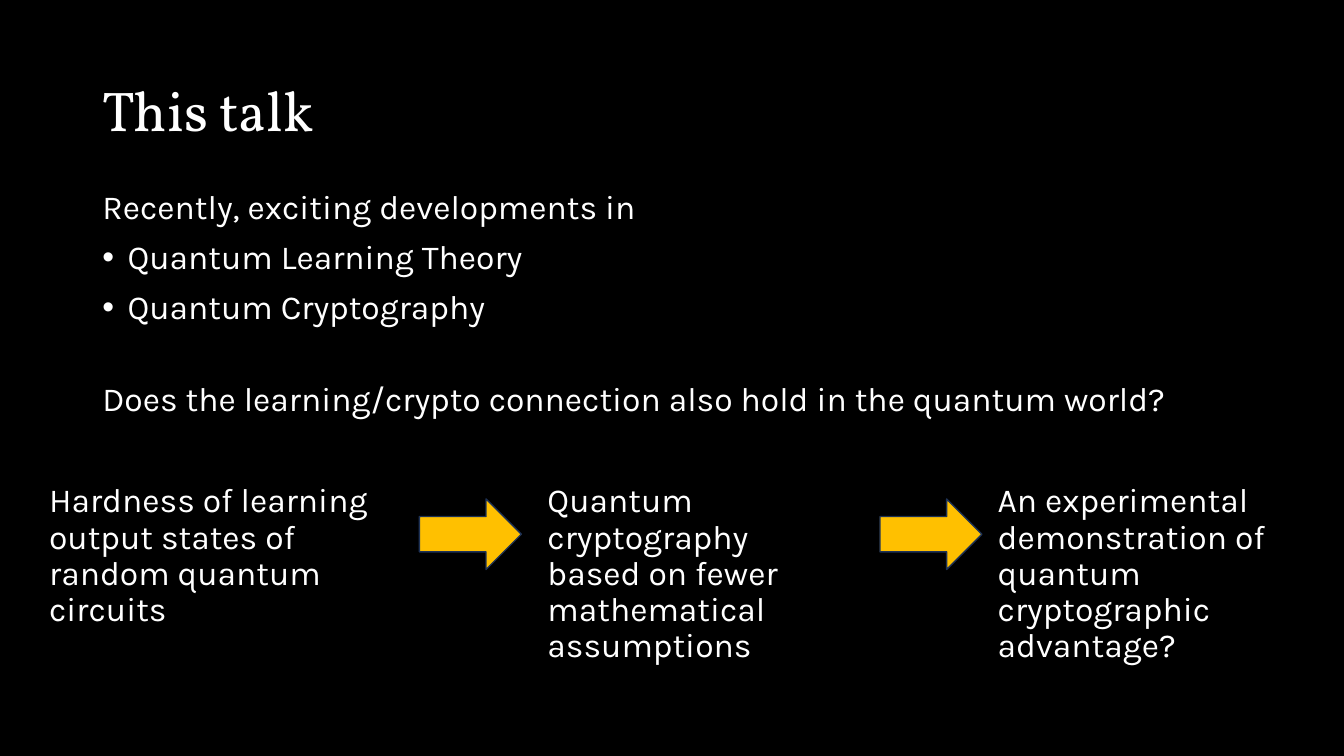
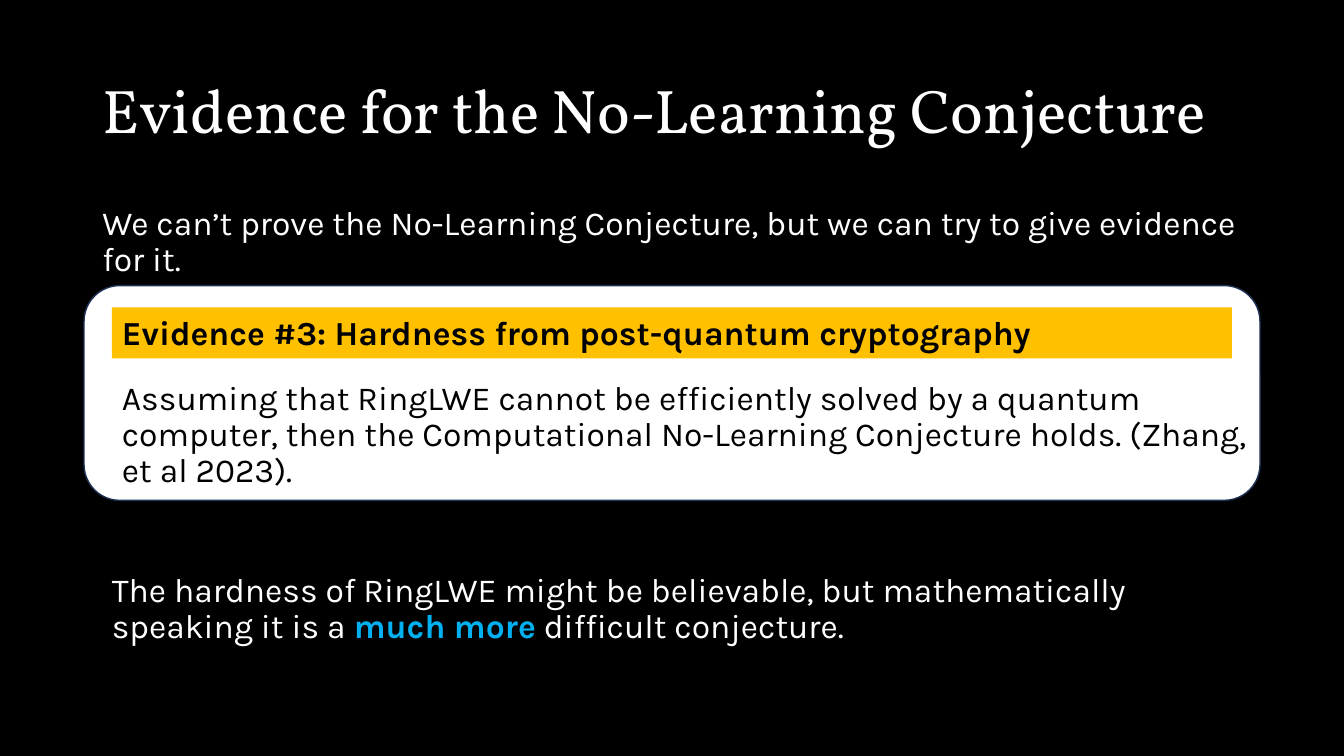
"""Build two talk slides on quantum learning and cryptography."""
from dataclasses import dataclass

import lxml.etree
import pptx
import pptx.dml.color
import pptx.enum.shapes
import pptx.enum.text
import pptx.oxml.ns
import pptx.util

WIDTH, HEIGHT = pptx.util.Inches(13.333), pptx.util.Inches(7.5)
COLS, ROWS = 48, 27
BLACK, WHITE, GOLD, NAVY, SKY = "000000", "FFFFFF", "FFC000", "1E3256", "00B0F0"
TITLE_FONT, BODY_FONT = "Vollkorn", "Karla"
SHAPES = pptx.enum.shapes.MSO_SHAPE
ANCHORS = pptx.enum.text.MSO_ANCHOR


@dataclass(frozen=True)
class Box:
    """An area in grid columns and rows."""
    col: float
    row: float
    cols: float
    rows: float

    def emu(self) -> tuple[int, int, int, int]:
        """Return left, top, width and height in EMU."""
        return (round(self.col * WIDTH / COLS), round(self.row * HEIGHT / ROWS),
                round(self.cols * WIDTH / COLS), round(self.rows * HEIGHT / ROWS))


@dataclass(frozen=True)
class Step:
    """One column in the chain of ideas."""
    col: float
    cols: float
    text: str


TITLE = Box(3.3, 1.44, 41.4, 5.22)
MARGIN, MEASURE = TITLE.col, TITLE.cols
STEP_ROW, ARROW_ROW = 17.1, 17.82
STEPS = (
    Step(1.4, 13.6, "Hardness of learning\noutput states of\nrandom quantum circuits"),
    Step(19.2, 13, "Quantum cryptography\nbased on fewer\nmathematical assumptions"),
    Step(35.28, 12.72, "An experimental\ndemonstration of\nquantum cryptographic\nadvantage?"),
)
ARROW_COLS = (14.98, 31.43)


def rgb(value: str) -> pptx.dml.color.RGBColor:
    """Turn a hex string into a colour."""
    return pptx.dml.color.RGBColor.from_string(value)


def add_run(p, text: str, *, size: float = 24, font: str = BODY_FONT,
            color: str = WHITE, bold: bool = False) -> None:
    """Add formatted text to a paragraph, with newlines as line breaks."""
    for i, line in enumerate(text.split("\n")):
        if i:
            p.add_line_break()
        r = p.add_run()
        r.text = line
        r.font.size = pptx.util.Pt(size)
        r.font.name = font
        r.font.bold = bold
        r.font.color.rgb = rgb(color)


def add_bullet(p) -> None:
    """Give a paragraph a hanging bullet."""
    pr = p._p.get_or_add_pPr()
    indent = pptx.util.Inches(0.25)
    pr.set("marL", str(indent))
    pr.set("indent", str(-indent))
    lxml.etree.SubElement(pr, pptx.oxml.ns.qn("a:buFont"), typeface="Arial")
    lxml.etree.SubElement(pr, pptx.oxml.ns.qn("a:buChar"), char="•")


def add_text(slide, box: Box, text: str = "", *, before: float = 10, spacing: float = 0.9,
             bullets: tuple[str, ...] = (), anchor=ANCHORS.TOP, **style):
    """Add a text box with optional bullets and return its first paragraph."""
    tf = slide.shapes.add_textbox(*box.emu()).text_frame
    tf.word_wrap = True
    tf.vertical_anchor = anchor
    for i, line in enumerate((text, *bullets)):
        p = tf.add_paragraph() if i else tf.paragraphs[0]
        p.line_spacing = spacing
        p.space_before = pptx.util.Pt(before)
        if i:
            add_bullet(p)
        if line:
            add_run(p, line, **style)
    return tf.paragraphs[0]


def add_shape(slide, kind, box: Box, fill: str, line: str = "") -> None:
    """Add a filled preset shape, outlined when a line colour is given."""
    sp = slide.shapes.add_shape(kind, *box.emu())
    sp.shadow.inherit = False
    sp.fill.solid()
    sp.fill.fore_color.rgb = rgb(fill)
    if line:
        sp.line.color.rgb = rgb(line)
        sp.line.width = pptx.util.Pt(1)
    else:
        sp.line.fill.background()


def add_slide(prs, title: str, size: float):
    """Add a black slide with its title."""
    slide = prs.slides.add_slide(prs.slide_layouts[6])
    slide.background.fill.solid()
    slide.background.fill.fore_color.rgb = rgb(BLACK)
    add_text(slide, TITLE, title, before=0, anchor=ANCHORS.MIDDLE,
             size=size, font=TITLE_FONT)
    return slide


def build_talk(prs) -> None:
    """Build the overview slide."""
    slide = add_slide(prs, "This talk", 40)
    add_text(slide, Box(MARGIN, 6.62, MEASURE, 7.96), "Recently, exciting developments in",
             bullets=("Quantum Learning Theory", "Quantum Cryptography"))
    add_text(slide, Box(MARGIN, 13.5, MEASURE, 2.52),
             "Does the learning/crypto connection also hold in the quantum world?")
    for step in STEPS:
        add_text(slide, Box(step.col, STEP_ROW, step.cols, 7.16), step.text)
    for col in ARROW_COLS:
        add_shape(slide, SHAPES.RIGHT_ARROW, Box(col, ARROW_ROW, 3.64, 2.52), GOLD, NAVY)


def build_evidence(prs) -> None:
    """Build the evidence slide."""
    slide = add_slide(prs, "Evidence for the No-Learning Conjecture", 44)
    add_text(slide, Box(MARGIN, 7.2, MEASURE, 1.94),
             "We can’t prove the No-Learning Conjecture, but we can try to give evidence for it.")
    add_shape(slide, SHAPES.ROUNDED_RECTANGLE, Box(3, 10.2, 42, 7.67), WHITE, NAVY)
    banner = Box(4, 10.98, 40, 1.82)
    add_shape(slide, SHAPES.RECTANGLE, banner, GOLD)
    add_text(slide, banner, "Evidence #3: Hardness from post-quantum cryptography",
             before=0, spacing=1.0, color=BLACK, bold=True)
    add_text(slide, Box(banner.col, 13.43, MEASURE, 3.64),
             "Assuming that RingLWE cannot be efficiently solved by a quantum computer, then "
             "the Computational No-Learning Conjecture holds. (Zhang, et al 2023).", color=BLACK)
    p = add_text(slide, Box(3.64, 20.3, MEASURE, 4.64),
                 "The hardness of RingLWE might be believable, but mathematically "
                 "speaking it is a ")
    add_run(p, "much more", color=SKY, bold=True)
    add_run(p, " difficult conjecture.")


def main() -> None:
    """Build and save the presentation."""
    prs = pptx.Presentation()
    prs.slide_width, prs.slide_height = WIDTH, HEIGHT
    build_talk(prs)
    build_evidence(prs)
    prs.save("out.pptx")


if __name__ == "__main__":
    main()
